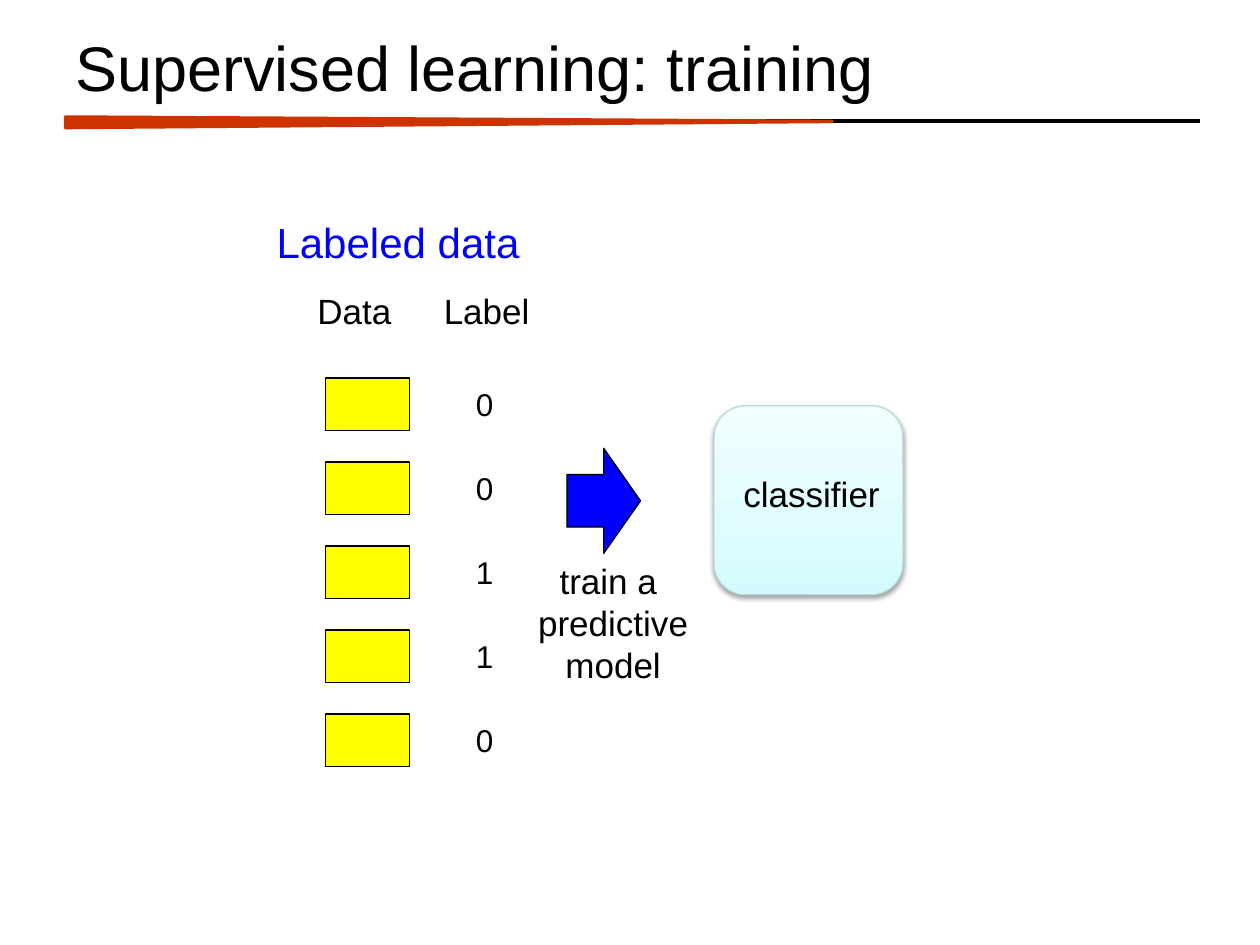
from copy import deepcopy

from lxml.etree import SubElement
from pptx import Presentation
from pptx.dml.color import RGBColor
from pptx.enum.shapes import MSO_CONNECTOR as Connector, MSO_SHAPE as Shape
from pptx.enum.text import MSO_ANCHOR as Anchor, MSO_AUTO_SIZE as AutoSize, PP_ALIGN as Align
from pptx.oxml.ns import qn
from pptx.util import Inches, Pt

COLORS = {
    "ink": "000000",
    "rule": "CC3300",
    "sample": "FFFF00",
    "accent": "0000FF",
    "box_bottom": "D3FBFF",
    "box_middle": "DFFCFF",
    "box_top": "F2FEFF",
    "box_line": "B6DCDF",
}
COLUMNS, ROWS = 120, 90


def color(name):
    return RGBColor.from_string(COLORS[name])


class TrainingSlide:
    font = "Arial"

    def __init__(self, presentation):
        self.cell_width = presentation.slide_width / COLUMNS
        self.cell_height = presentation.slide_height / ROWS
        self.slide = presentation.slides.add_slide(presentation.slide_layouts[6])

    def place(self, column, row, columns, rows):
        return (round(column * self.cell_width), round(row * self.cell_height),
                round(columns * self.cell_width), round(rows * self.cell_height))

    def text(self, content, area, size, ink="ink", align=Align.CENTER, wrap=False):
        box = self.slide.shapes.add_textbox(*self.place(*area))
        frame = box.text_frame
        frame.text = content
        frame.word_wrap = wrap
        frame.auto_size = AutoSize.NONE if wrap else AutoSize.SHAPE_TO_FIT_TEXT
        frame.vertical_anchor = Anchor.MIDDLE if wrap else Anchor.TOP
        for paragraph in frame.paragraphs:
            paragraph.alignment = align
            for run in paragraph.runs:
                run.font.name = self.font
                run.font.size = Pt(size)
                run.font.color.rgb = color(ink)
        return box

    def shape(self, kind, area, fill, line="ink", width=0.75):
        shape = self.slide.shapes.add_shape(kind, *self.place(*area))
        shape.shadow.inherit = False
        shape.fill.solid()
        shape.fill.fore_color.rgb = color(fill)
        shape.line.color.rgb = color(line)
        shape.line.width = Pt(width)
        return shape

    def rule(self, start, end, row):
        x, y, length, _ = self.place(start, row, end - start, 0)
        line = self.slide.shapes.add_connector(Connector.STRAIGHT, x, y, x + length, y)
        line.line.color.rgb = color("ink")
        line.line.width = Pt(2)
        SubElement(line._element.spPr, qn("a:effectLst"))

    def wedge(self, area):
        wedge = self.shape(Shape.ISOSCELES_TRIANGLE, area, "rule", "rule", 2)
        wedge.adjustments[0] = 0.417
        wedge.rotation = 90

    def glass_box(self, area):
        box = self.shape(Shape.ROUNDED_RECTANGLE, area, "box_top", "box_line")
        box.fill.gradient()
        box.fill.gradient_angle = 90
        properties = box._element.spPr
        stops = properties.find(qn("a:gradFill")).find(qn("a:gsLst"))
        stops.insert(1, deepcopy(stops[0]))
        shades = (("box_bottom", 0), ("box_middle", 0.35), ("box_top", 1))
        for stop, (name, position) in zip(box.fill.gradient_stops, shades):
            stop.color.rgb = color(name)
            stop.position = position
        effects = properties.find(qn("a:effectLst"))
        shadow = SubElement(effects, qn("a:outerShdw"), blurRad="40000", dist="20000",
                            dir="5400000", rotWithShape="0")
        shade = SubElement(shadow, qn("a:srgbClr"), val=COLORS["ink"])
        SubElement(shade, qn("a:alpha"), val="38000")
        return box

    def group(self, *members):
        self.slide.shapes.add_group_shape(members)


def main():
    presentation = Presentation()
    presentation.slide_width = Inches(10)
    presentation.slide_height = Inches(7.5)
    page = TrainingSlide(presentation)

    page.rule(6.25, 114.25, 11.55)
    page.wedge((42.25, -24.85, 1, 73))
    page.text("Supervised learning: training", (6, 2, 108, 8.65), 36,
              align=Align.LEFT, wrap=True)

    page.text("Labeled data", (25, 20, 25.8, 6), 24, "accent")
    page.text("Data", (29, 27, 9.5, 5.25), 20)
    page.text("Label", (41, 27, 10.7, 5.25), 20)
    for index, label in enumerate("00110"):
        row = 36 + 8 * index
        page.shape(Shape.RECTANGLE, (31, row, 8, 5), "sample")
        page.text(label, (44.1, row + 0.05, 4.1, 4.85), 18)

    page.shape(Shape.RIGHT_ARROW, (54, 42.7, 7, 10), "accent")
    page.text("train a \npredictive\nmodel", (50, 52.7, 16.8, 13.3), 20)
    page.group(page.glass_box((68, 38.65, 18, 18)),
               page.text("classifier", (69.5, 44.4, 15.6, 5.25), 20))

    presentation.save("out.pptx")


if __name__ == "__main__":
    main()
